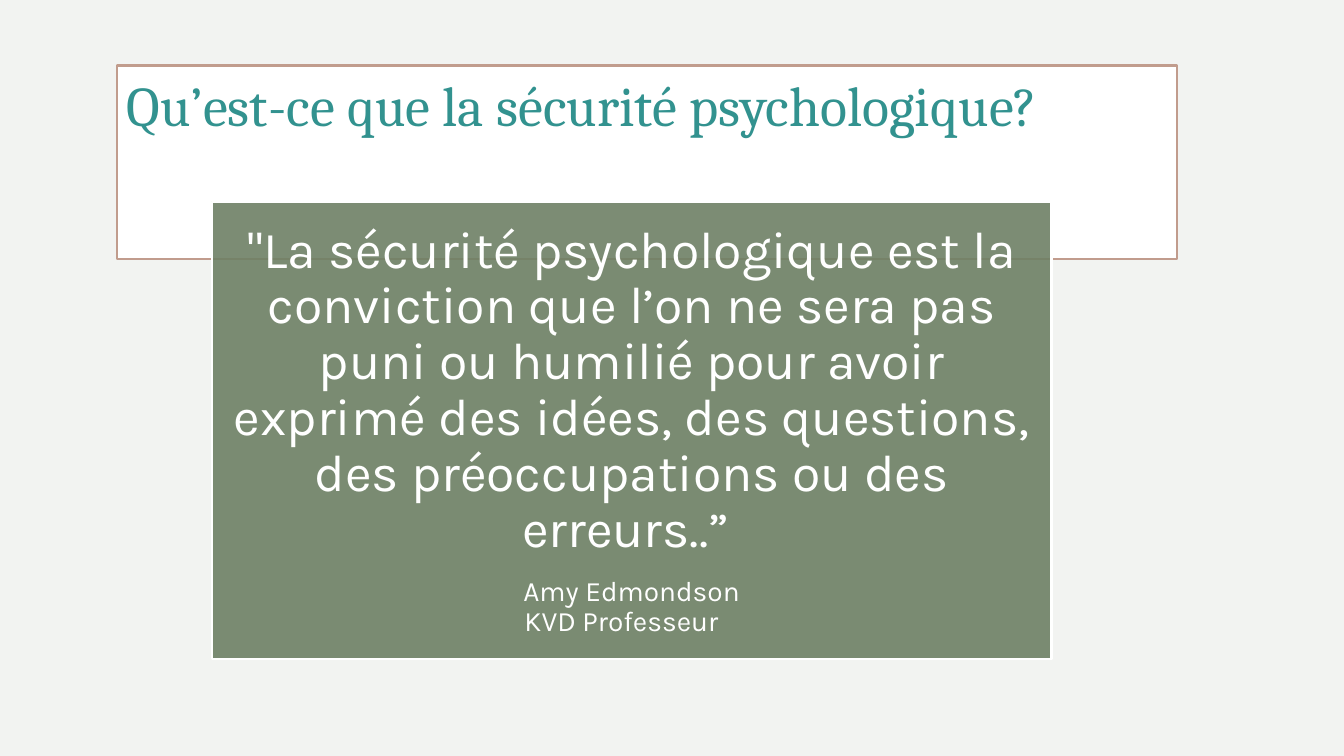
import pptx
import pptx.dml.color
import pptx.enum.shapes
import pptx.enum.text
import pptx.oxml
import pptx.oxml.ns
import pptx.util

Inches = pptx.util.Inches
Pt = pptx.util.Pt
RGBColor = pptx.dml.color.RGBColor
Align = pptx.enum.text.PP_ALIGN
Anchor = pptx.enum.text.MSO_ANCHOR

WHITE = RGBColor(0xFF, 0xFF, 0xFF)
SAGE = RGBColor(0xA9, 0xB5, 0xA2)
GREEN = RGBColor(0x6E, 0x80, 0x65)
CLAY = RGBColor(0xC1, 0x9C, 0x8D)
TEAL = RGBColor(0x32, 0x92, 0x8F)

QUOTE = (
    "\"La sécurité psychologique est la conviction que l’on ne sera pas puni "
    "ou humilié pour avoir exprimé des idées, des questions, des "
    "préoccupations ou des erreurs..” "
)


def set_format(target, values):
    for name, value in values.items():
        setattr(target, name, value)


def add_panel(slide, box, fill, line=None, opacity=100):
    shape = slide.shapes.add_shape(
        pptx.enum.shapes.MSO_SHAPE.RECTANGLE, *map(Inches, box))
    shape.shadow.inherit = False
    shape.fill.solid()
    shape.fill.fore_color.rgb = fill
    if opacity < 100:
        color = shape._element.spPr.find(".//" + pptx.oxml.ns.qn("a:srgbClr"))
        alpha = pptx.oxml.parse_xml(
            f'<a:alpha {pptx.oxml.ns.nsdecls("a")} val="{opacity * 1000}"/>')
        color.append(alpha)
    if line is None:
        shape.line.fill.background()
    else:
        shape.line.color.rgb = line
        shape.line.width = Pt(1.5)
    return shape


def set_frame(frame, anchor, margin_side, margin_top):
    set_format(frame, {
        "word_wrap": True, "vertical_anchor": anchor,
        "margin_left": Inches(margin_side), "margin_right": Inches(margin_side),
        "margin_top": Inches(margin_top), "margin_bottom": Inches(margin_top),
    })


def write(paragraph, text, color, font, layout):
    run = paragraph.add_run()
    run.text = text
    set_format(run.font, font)
    run.font.color.rgb = color
    set_format(paragraph, layout)


def add_title(slide, box):
    frame = add_panel(slide, box, WHITE, CLAY).text_frame
    set_frame(frame, Anchor.TOP, 0.1, 0.05)
    write(frame.paragraphs[0], "Qu’est-ce que la sécurité psychologique?",
          TEAL, {"name": "Cambria", "size": Pt(40)},
          {"alignment": Align.LEFT})


def add_quote(slide, box):
    add_panel(slide, box, GREEN, WHITE, 90)
    frame = slide.shapes.add_textbox(*map(Inches, box)).text_frame
    set_frame(frame, Anchor.MIDDLE, 0.15, 0.15)
    lines = [(QUOTE, 37, 13, 0), ("Amy Edmondson", 20, 0, 0),
             ("KVD Professeur", 20, 0, 0.2)]
    for index, (text, size, space_after, right_indent) in enumerate(lines):
        paragraph = frame.add_paragraph() if index else frame.paragraphs[0]
        write(paragraph, text, WHITE, {"name": "Karla", "size": Pt(size)},
              {"alignment": Align.CENTER, "line_spacing": 0.9,
               "space_after": Pt(space_after)})
        if right_indent:
            paragraph._p.get_or_add_pPr().set("marR", str(Inches(right_indent)))


def main():
    presentation = pptx.Presentation()
    set_format(presentation, {"slide_width": Inches(13.33),
                              "slide_height": Inches(7.5)})
    slide = presentation.slides.add_slide(presentation.slide_layouts[6])
    add_panel(slide, (0, 0, 13.33, 7.5), SAGE, opacity=15)
    add_title(slide, (1.16, 0.65, 10.51, 1.92))
    add_quote(slide, (2.1, 2, 8.33, 4.54))
    presentation.save("out.pptx")


if __name__ == "__main__":
    main()
